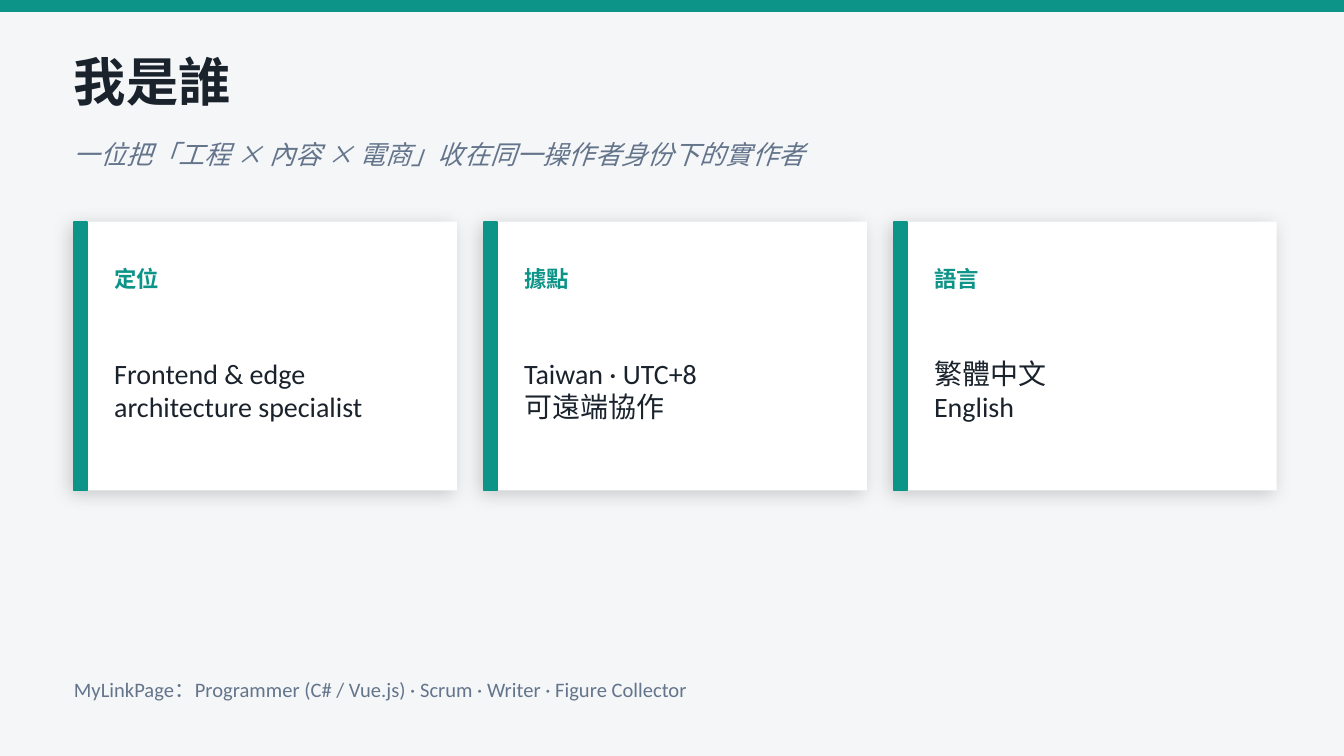
"""Build the "我是誰" profile slide with three fact cards."""
from lxml import etree
from pptx import Presentation
from pptx.dml.color import RGBColor
from pptx.enum.shapes import MSO_SHAPE
from pptx.enum.text import MSO_ANCHOR
from pptx.oxml.ns import qn
from pptx.util import Pt

RECTANGLE = MSO_SHAPE.RECTANGLE
MIDDLE = MSO_ANCHOR.MIDDLE

TEAL = RGBColor(0x0D, 0x94, 0x88)
INK = RGBColor(0x1A, 0x22, 0x2C)
SLATE = RGBColor(0x64, 0x74, 0x8B)
WHITE = RGBColor(0xFF, 0xFF, 0xFF)
PAPER = RGBColor(0xF4, 0xF6, 0xF8)
BLACK = RGBColor(0x00, 0x00, 0x00)

LATIN_FONT = "Calibri"
CHINESE_FONT = "Noto Sans CJK TC"

MARGIN = 39.6
CONTENT_WIDTH = 648
CARD_TOP = 118.8
CARD_WIDTH = 205.2
CARD_HEIGHT = 144
CARD_GAP = 14.4
CARD_INDENT = 21.6
CARD_TEXT_WIDTH = 169.2

FACTS = [
    ("定位", ["Frontend & edge", "architecture specialist"]),
    ("據點", ["Taiwan · UTC+8", "可遠端協作"]),
    ("語言", ["繁體中文", "English"]),
]


class ProfileSlide:
    def __init__(self, slide):
        self.slide = slide
        slide.background.fill.solid()
        slide.background.fill.fore_color.rgb = PAPER

    def panel(self, left, top, width, height, color, outlined=True):
        panel = self.slide.shapes.add_shape(
            RECTANGLE, Pt(left), Pt(top), Pt(width), Pt(height))
        panel.shadow.inherit = False
        panel.fill.solid()
        panel.fill.fore_color.rgb = color
        if outlined:
            panel.line.color.rgb = color
            panel.line.width = Pt(1)
        else:
            panel.line.fill.background()
        return panel

    def cast_shadow(self, panel):
        effects = panel._element.spPr.find(qn("a:effectLst"))
        shadow = etree.SubElement(
            effects, qn("a:outerShdw"), blurRad=str(Pt(10)), dist=str(Pt(3)),
            dir=str(135 * 60000), algn="bl", rotWithShape="0")
        tint = etree.SubElement(shadow, qn("a:srgbClr"), val=str(BLACK))
        etree.SubElement(tint, qn("a:alpha"), val="18000")

    def text(self, lines, left, top, width, height, *, size, color,
             font=LATIN_FONT, bold=False, italic=False):
        box = self.slide.shapes.add_textbox(
            Pt(left), Pt(top), Pt(width), Pt(height))
        frame = box.text_frame
        frame.word_wrap = True
        frame.vertical_anchor = MIDDLE
        frame.margin_left = frame.margin_right = Pt(0)
        frame.margin_top = frame.margin_bottom = Pt(0)
        for index, line in enumerate(lines):
            paragraph = frame.add_paragraph() if index else frame.paragraphs[0]
            run = paragraph.add_run()
            run.text = line
            run.font.size = Pt(size)
            run.font.bold = bold
            run.font.italic = italic
            run.font.color.rgb = color
            run.font.name = font
            etree.SubElement(run.font._element, qn("a:ea"), typeface=font)

    def card(self, left, heading, details):
        self.cast_shadow(self.panel(
            left, CARD_TOP, CARD_WIDTH, CARD_HEIGHT, WHITE, outlined=False))
        self.panel(left, CARD_TOP, 7.2, CARD_HEIGHT, TEAL)
        text_left = left + CARD_INDENT
        self.text([heading], text_left, CARD_TOP + 18, CARD_TEXT_WIDTH, 25.2,
                  size=12, color=TEAL, font=CHINESE_FONT, bold=True)
        self.text(details, text_left, CARD_TOP + 54, CARD_TEXT_WIDTH, 72,
                  size=15, color=INK)


def main():
    deck = Presentation()
    deck.slide_width, deck.slide_height = Pt(720), Pt(405)
    profile = ProfileSlide(deck.slides.add_slide(deck.slide_layouts[6]))

    profile.panel(0, 0, 720, 5.76, TEAL)
    profile.text(["我是誰"], MARGIN, 25.2, CONTENT_WIDTH, 36,
                 size=28, color=INK, font=CHINESE_FONT, bold=True)
    profile.text(["一位把「工程 × 內容 × 電商」收在同一操作者身份下的實作者"],
                 MARGIN, 68.4, CONTENT_WIDTH, 28.8,
                 size=14, color=SLATE, font=CHINESE_FONT, italic=True)
    for column, (heading, details) in enumerate(FACTS):
        profile.card(MARGIN + column * (CARD_WIDTH + CARD_GAP), heading, details)
    profile.text(
        ["MyLinkPage：Programmer (C# / Vue.js) · Scrum · Writer · Figure Collector"],
        MARGIN, 356.4, CONTENT_WIDTH, 25.2, size=11, color=SLATE)

    deck.save("out.pptx")


if __name__ == "__main__":
    main()
